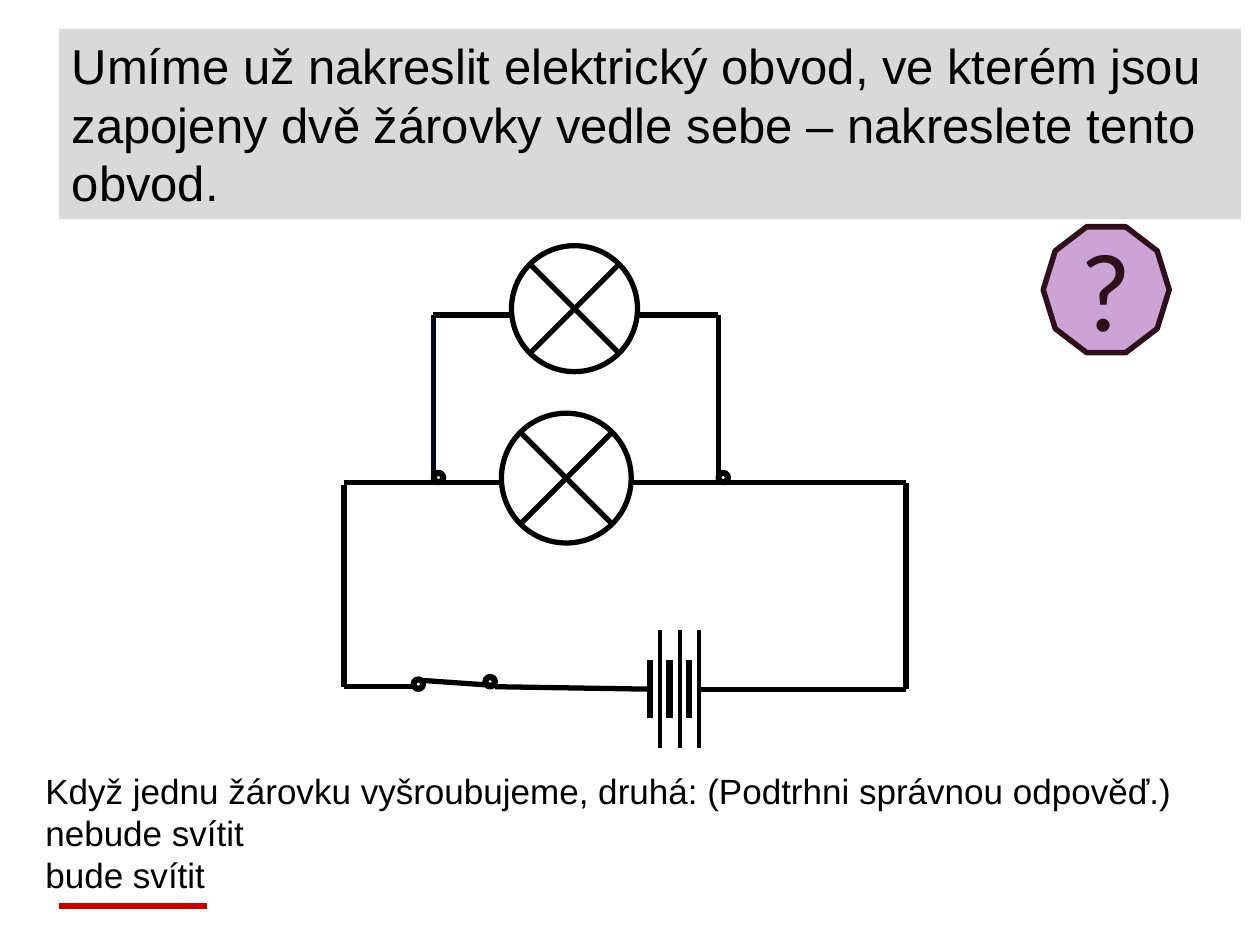
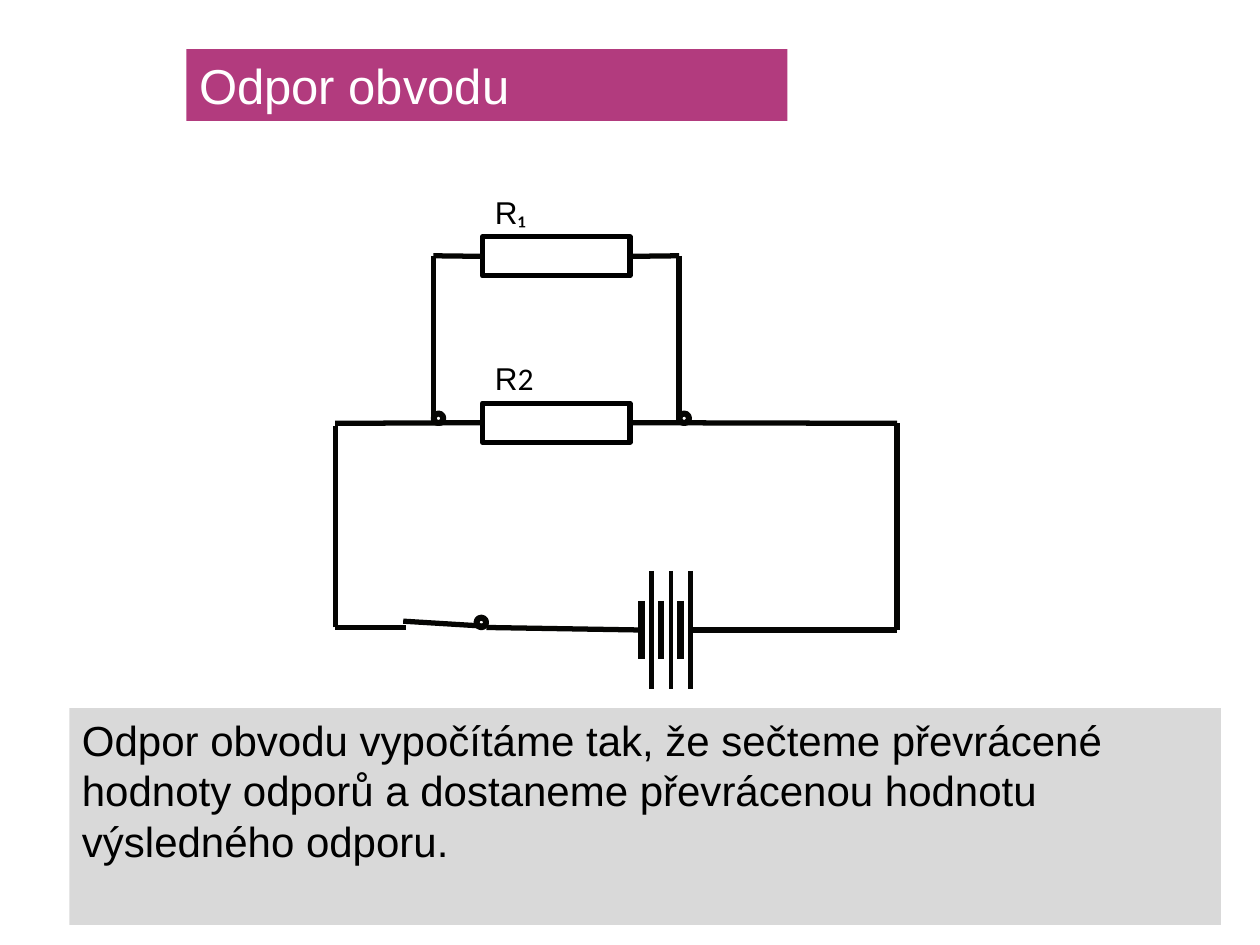
from dataclasses import dataclass
from lxml import etree
from pptx import Presentation
from pptx.dml.color import RGBColor
from pptx.enum.shapes import MSO_CONNECTOR, MSO_SHAPE
from pptx.enum.text import MSO_ANCHOR, MSO_AUTO_SIZE, PP_ALIGN
from pptx.oxml.ns import qn
from pptx.util import Inches, Pt

STRAIGHT = MSO_CONNECTOR.STRAIGHT
RECT, OVAL, RING, DECAGON = (MSO_SHAPE.RECTANGLE, MSO_SHAPE.OVAL,
                             MSO_SHAPE.DONUT, MSO_SHAPE.DECAGON)
TOP, MIDDLE = MSO_ANCHOR.TOP, MSO_ANCHOR.MIDDLE
FIXED = MSO_AUTO_SIZE.NONE
LEFT, CENTER = PP_ALIGN.LEFT, PP_ALIGN.CENTER


@dataclass(frozen=True)
class Theme:
    black: str = "000000"
    white: str = "FFFFFF"
    ink: str = "050503"
    navy: str = "010421"
    grey: str = "D9D9D9"
    pink: str = "B23B7E"
    lilac: str = "CDA3D6"
    plum: str = "2E0F1A"
    red: str = "C00000"
    font: str = "Arial"
    digit: str = "Calibri"
    sign: str = "Lato"
    title: int = 28
    body: int = 24
    quiz: int = 20
    label: int = 18
    mark: int = 60
    wire: float = 3
    edge: float = 3.15
    long: float = 2.5
    short: float = 3.75
    under: float = 3.5


THEME = Theme()


def rgb(code):
    return RGBColor.from_string(code)


def lengths(*values):
    return [Inches(value) for value in values]


def style(font, size, color, name=THEME.font):
    font.size, font.name = Pt(size), name
    font.color.rgb = rgb(color)


def panel(holder, box, lines, size, color, fill=None):
    holder.left, holder.top, holder.width, holder.height = lengths(*box)
    if fill:
        holder.fill.solid()
        holder.fill.fore_color.rgb = rgb(fill)
    frame = holder.text_frame
    frame.auto_size, frame.vertical_anchor = FIXED, TOP
    frame.word_wrap = True
    frame.text = "\n".join(lines)
    for par in frame.paragraphs:
        props = par._p.get_or_add_pPr()
        props.set("marL", "0")
        props.set("indent", "0")
        etree.SubElement(props, qn("a:buNone"))
        par.alignment, par.space_before = LEFT, Pt(0)
        style(par.font, size, color)


def solid(slide, kind, box, fill, line, width):
    shape = slide.shapes.add_shape(kind, *lengths(*box))
    shape.shadow.inherit = False
    shape.fill.solid()
    shape.fill.fore_color.rgb = rgb(fill)
    shape.line.color.rgb = rgb(line)
    shape.line.width = Pt(width)
    return shape


def wire(slide, start, end, color, width=THEME.wire):
    line = slide.shapes.add_connector(STRAIGHT, *lengths(*start, *end))
    line.line.color.rgb = rgb(color)
    line.line.width = Pt(width)
    etree.SubElement(line._element.spPr, qn("a:effectLst"))
    return line


def node(slide, x, y, color):
    ring = solid(slide, RING, (x, y, 0.08, 0.08), THEME.black, color, THEME.edge)
    ring.adjustments[0] = 0.055


def lamp(slide, x, y, size):
    bulb = solid(slide, OVAL, (x, y, size, size), THEME.white, THEME.black, THEME.wire)
    near, far = 0.15 * size, 0.85 * size
    wire(slide, (x + near, y + near), (x + far, y + far), THEME.black)
    wire(slide, (x + far, y + near), (x + near, y + far), THEME.black)
    return bulb


def resistor(slide, y, digit):
    x = 3.83
    label = slide.shapes.add_textbox(*lengths(x, y - 0.4, 0.62, 0.4))
    par = label.text_frame.paragraphs[0]
    style(par.font, THEME.label, THEME.black)
    for text, name in (("R", THEME.font), (digit, THEME.digit)):
        run = par.add_run()
        run.text, run.font.name = text, name
    return solid(slide, RECT, (x, y, 1.17, 0.31), THEME.white, THEME.black, THEME.wire)


def span(slide, part, left, right, y, color):
    near = part.left.inches
    far = near + part.width.inches
    for start, end, site in ((near, left, 1), (far, right, 3)):
        line = wire(slide, (start, y), (end, y), color)
        if part.auto_shape_type == RECT:
            line.begin_connect(part, site)


def battery(slide, x, y, color):
    for step in range(3):
        thick = x + 0.155 * step
        thin = thick + 0.08
        wire(slide, (thick, y - 0.23), (thick, y + 0.23), color, THEME.short)
        wire(slide, (thin, y - 0.47), (thin, y + 0.47), color, THEME.long)


def loop(slide, x, y, part, color, closed):
    right, base = x + 4.46, y + 1.64
    span(slide, part, x, right, y, color)
    wire(slide, (x, base - 0.02), (x, y + 0.02), color)
    wire(slide, (right, base), (right, y), color)
    wire(slide, (x, base - 0.02), (x + 0.56, base - 0.02), color)
    wire(slide, (x + 1.2, base - 0.02), (x + 2.43, base), color)
    wire(slide, (x + 2.82, base), (right, base), color)
    wire(slide, (x + (0.62 if closed else 0.54), y + 1.57), (x + 1.19, y + 1.61), color)
    node(slide, x + 1.12, y + 1.54, color)
    if closed:
        node(slide, x + 0.55, y + 1.56, color)
    battery(slide, x + 2.43, base, color)


def branch(slide, right, y, part, color, side):
    left, top = 3.44, y - 1.33
    span(slide, part, left, right, top, color)
    for x, shade in ((left, side), (right, color)):
        wire(slide, (x, top), (x, y), shade)
        node(slide, x, y - 0.08, color)


def badge(slide):
    sign = solid(slide, DECAGON, (8.28, 1.8, 1, 1), THEME.lilac, THEME.plum, THEME.edge)
    frame = sign.text_frame
    frame.vertical_anchor = MIDDLE
    frame.text = "?"
    par = frame.paragraphs[0]
    par.alignment = CENTER
    style(par.font, THEME.mark, THEME.plum, THEME.sign)


def lamps(slide):
    title, body = slide.placeholders
    panel(title, (0.47, 0.23, 9.38, 1.51),
          ["Umíme už nakreslit elektrický obvod, ve kterém jsou zapojeny "
           "dvě žárovky vedle sebe – nakreslete tento obvod."],
          THEME.title, THEME.black, THEME.grey)
    panel(body, (0.26, 6.06, 9.38, 1.11),
          ["Když jednu žárovku vyšroubujeme, druhá: (Podtrhni správnou odpověď.)",
           "nebude svítit", "bude svítit"],
          THEME.quiz, THEME.black)
    loop(slide, 2.73, 3.83, lamp(slide, 3.98, 3.28, 1.03), THEME.black, True)
    branch(slide, 5.7, 3.83, lamp(slide, 4.06, 1.95, 1), THEME.black, THEME.navy)
    badge(slide)
    wire(slide, (0.47, 7.19), (1.64, 7.19), THEME.red, THEME.under)


def ohms(slide):
    title, body = slide.placeholders
    panel(title, (1.48, 0.39, 4.77, 0.57), ["Odpor obvodu"],
          THEME.title, THEME.white, THEME.pink)
    panel(body, (0.55, 5.62, 9.14, 1.72),
          ["Odpor obvodu vypočítáme tak, že sečteme převrácené hodnoty "
           "odporů a dostaneme převrácenou hodnotu výsledného odporu."],
          THEME.body, THEME.black, THEME.grey)
    loop(slide, 2.66, 3.36, resistor(slide, 3.2, "2"), THEME.ink, False)
    branch(slide, 5.39, 3.36, resistor(slide, 1.88, "₁"), THEME.ink, THEME.ink)


def main():
    deck = Presentation()
    deck.slide_width, deck.slide_height = lengths(10, 7.5)
    for draw in (lamps, ohms):
        draw(deck.slides.add_slide(deck.slide_layouts[1]))
    deck.save("out.pptx")


if __name__ == "__main__":
    main()
